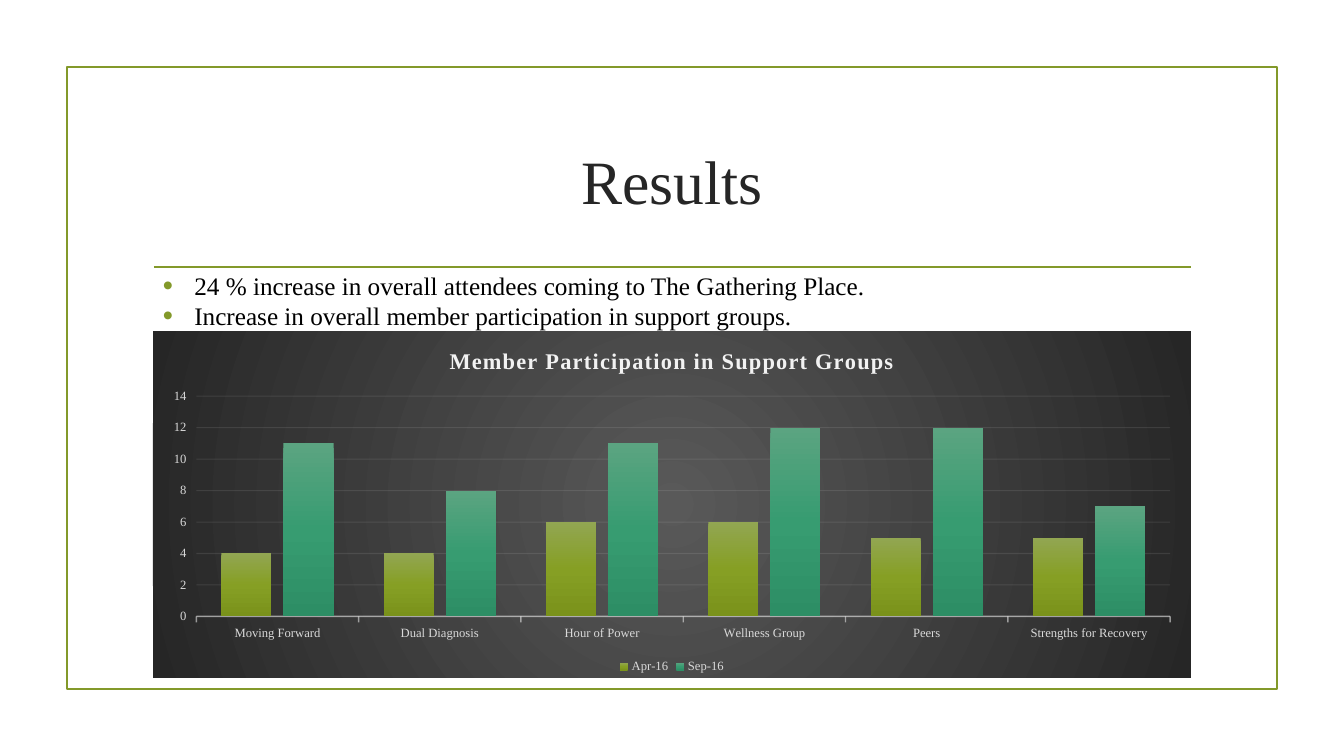
import lxml.etree
import pptx
import pptx.chart.data
import pptx.dml.color
import pptx.enum.chart
import pptx.enum.shapes
import pptx.enum.text
import pptx.oxml
import pptx.oxml.ns
import pptx.util

PX = 914400 / 100.8
FONT = "Times New Roman"
OLIVE = "83992A"
PALE = "F2F2F2"
LABEL_GREY = "D9D9D9"
A_NS = 'xmlns:a="http://schemas.openxmlformats.org/drawingml/2006/main"'
LINEAR = '<a:lin ang="5400000" scaled="0"/>'
RADIAL = ('<a:path path="circle"><a:fillToRect l="50000" t="50000" '
          'r="50000" b="50000"/></a:path>')


def box(*lengths):
    """Turn px lengths into EMU."""
    return [round(length * PX) for length in lengths]


def paint(target, color, opacity=100, gradient=None):
    """Colour a font or fill; with gradient, give XML element target a gradient of color stops."""
    if gradient:
        stops = "".join(
            f'<a:gs pos="{round(100000 * i / (len(color) - 1))}"><a:srgbClr val="{stop}"/></a:gs>'
            for i, stop in enumerate(color))
        target.insert(0, pptx.oxml.parse_xml(
            f'<a:gradFill {A_NS} rotWithShape="1"><a:gsLst>{stops}</a:gsLst>{gradient}</a:gradFill>'))
        return
    fill = target.fill
    fill.solid()
    fill.fore_color.rgb = pptx.dml.color.RGBColor.from_string(color)
    if opacity < 100:
        for rgb in target._element.iter(pptx.oxml.ns.qn("a:srgbClr")) if hasattr(target, "_element") \
                else target._ln.iter(pptx.oxml.ns.qn("a:srgbClr")):
            lxml.etree.SubElement(rgb, pptx.oxml.ns.qn("a:alpha"), val=str(opacity * 1000))


prs = pptx.Presentation()
prs.slide_width, prs.slide_height = box(1344, 756)
slide = prs.slides.add_slide(prs.slide_layouts[5])

# Border and rule under the title
border = slide.shapes.add_shape(pptx.enum.shapes.MSO_SHAPE.RECTANGLE, *box(67, 67, 1210, 622))
border.shadow.inherit = False
border.fill.background()
rule = slide.shapes.add_connector(pptx.enum.shapes.MSO_CONNECTOR.STRAIGHT, *box(154, 267, 1191, 267))
lxml.etree.SubElement(rule._element.spPr, pptx.oxml.ns.qn("a:effectLst"))
for outline in (border.line, rule.line):
    paint(outline, OLIVE)
    outline.width = pptx.util.Pt(1.25)

# Title
title = slide.shapes.title
title.left, title.top, title.width, title.height = box(143, 108, 1058, 144)
title.text_frame.text = "Results"
title.text_frame.vertical_anchor = pptx.enum.text.MSO_ANCHOR.MIDDLE
heading = title.text_frame.paragraphs[0]
heading.alignment = pptx.enum.text.PP_ALIGN.CENTER
heading.font.size = pptx.util.Pt(44)
heading.font.name = FONT
paint(heading.font, "262626")

# Participation chart
participation = pptx.chart.data.CategoryChartData()
participation.categories = ["Moving Forward", "Dual Diagnosis", "Hour of Power",
                            "Wellness Group", "Peers", "Strengths for Recovery"]
participation.add_series("Apr-16", [4, 4, 6, 6, 5, 5])
participation.add_series("Sep-16", [11, 8, 11, 12, 12, 7])
chart = slide.shapes.add_chart(pptx.enum.chart.XL_CHART_TYPE.COLUMN_CLUSTERED,
                               *box(153, 331, 1038, 347), participation).chart
chart.font.size = pptx.util.Pt(10)
chart.font.name = FONT

backdrop = pptx.oxml.parse_xml(
    '<c:spPr xmlns:c="http://schemas.openxmlformats.org/drawingml/2006/chart" '
    f'{A_NS}><a:ln><a:noFill/></a:ln></c:spPr>')
paint(backdrop, ["595959", "262626"], gradient=RADIAL)
chart._chartSpace.chart.addnext(backdrop)

chart.has_title = True
chart.chart_title.include_in_layout = False
chart.chart_title.text_frame.text = "Member Participation in Support Groups"
caption = chart.chart_title.text_frame.paragraphs[0].runs[0].font
caption.size = pptx.util.Pt(16)
caption.bold = True
caption.name = FONT
paint(caption, PALE)
caption._element.set("spc", "100")

chart.has_legend = True
chart.legend.position = pptx.enum.chart.XL_LEGEND_POSITION.BOTTOM
chart.legend.include_in_layout = False

groups, members = chart.category_axis, chart.value_axis
for labels in (groups.tick_labels.font, members.tick_labels.font, chart.legend.font):
    labels.size = pptx.util.Pt(9)
    labels.name = FONT
    paint(labels, LABEL_GREY)
members.minimum_scale, members.maximum_scale, members.major_unit = 0, 14, 2
members.format.line.fill.background()
members.has_major_gridlines = True
for line, width, opacity in ((groups.format.line, 1, 54),
                             (members.major_gridlines.format.line, 0.75, 10)):
    line.width = pptx.util.Pt(width)
    paint(line, PALE, opacity)

columns = chart.plots[0]
columns.gap_width = 100
columns.overlap = -24
columns.vary_by_categories = False
month_stops = [["92A652", "869F24", "7A921B"], ["5BA481", "379C71", "2D8E65"]]
for month, stops in zip(columns.series, month_stops):
    month.format.line.fill.background()
    paint(month._element.spPr, stops, gradient=LINEAR)

# Findings
findings = slide.shapes.add_textbox(*box(153, 265, 1038, 72)).text_frame
findings.word_wrap = True
findings.text = ("24 % increase in overall attendees coming to The Gathering Place.\n"
                 "Increase in overall member participation in support groups.")
for finding in findings.paragraphs:
    props = finding._p.get_or_add_pPr()
    props.set("marL", "285750")
    props.set("indent", "-285750")
    for bullet in (f'<a:buClr {A_NS}><a:srgbClr val="{OLIVE}"/></a:buClr>',
                   f'<a:buSzPct {A_NS} val="115000"/>',
                   f'<a:buFont {A_NS} typeface="Arial"/>',
                   f'<a:buChar {A_NS} char="•"/>'):
        props.append(pptx.oxml.parse_xml(bullet))
    finding.font.size = pptx.util.Pt(18)
    finding.font.name = FONT
    paint(finding.font, "000000")

prs.save("out.pptx")
